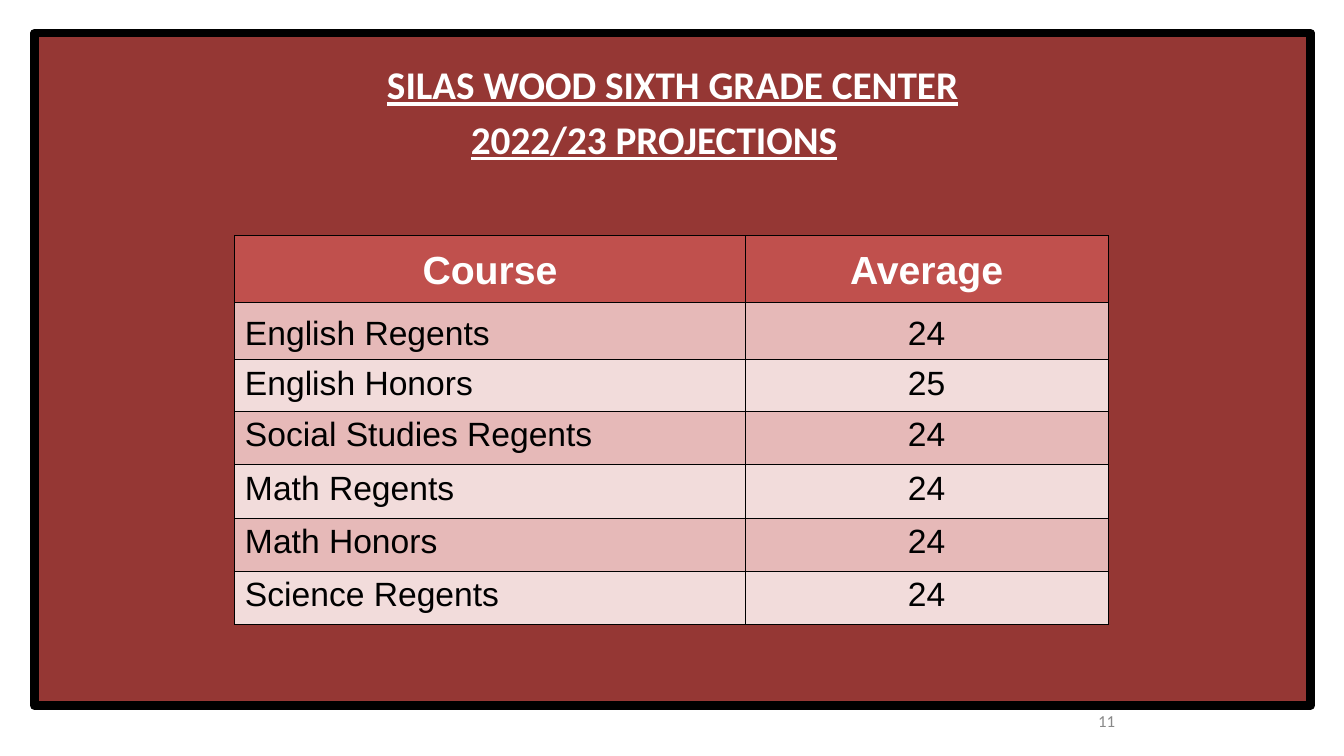
from lxml import etree
from pptx import Presentation
from pptx.dml.color import RGBColor
from pptx.enum.text import MSO_ANCHOR, MSO_AUTO_SIZE, PP_ALIGN
from pptx.oxml.ns import qn
from pptx.util import Inches, Pt

LEFT, MID, RIGHT = PP_ALIGN.LEFT, PP_ALIGN.CENTER, PP_ALIGN.RIGHT
TOP, CENTER = MSO_ANCHOR.TOP, MSO_ANCHOR.MIDDLE
FIXED = MSO_AUTO_SIZE.NONE

WIDE, HIGH = 13.33, 7.5
HUES = {
    "panel": "953734", "head": "C0504D", "odd": "E6B9B8", "even": "F2DCDB",
    "white": "FFFFFF", "black": "000000", "gray": "888888",
}
COLS = [5.06, 3.6]
ROWS = [0.66, 0.56, 0.51, 0.53, 0.53, 0.53, 0.53]
DATA = [
    ("Course", "Average"),
    ("English Regents", "24"),
    ("English Honors", "25"),
    ("Social Studies Regents", "24"),
    ("Math Regents", "24"),
    ("Math Honors", "24"),
    ("Science Regents", "24"),
]


def tint(name):
    return RGBColor.from_string(HUES[name])


def paint(fill, name):
    fill.solid()
    fill.fore_color.rgb = tint(name)


def place(shape, left, top, width, height):
    shape.left, shape.top = Inches(left), Inches(top)
    shape.width, shape.height = Inches(width), Inches(height)


def write(para, text, size=24, font="Arial", hue="black", bold=False,
          line=False, align=LEFT, gap=0):
    para.alignment = align
    para.space_before = Pt(gap)
    run = para.add_run()
    run.text = text
    run.font.size, run.font.name = Pt(size), font
    run.font.bold, run.font.underline = bold, line
    run.font.color.rgb = tint(hue)


def add_title(slide):
    panel = slide.shapes.title
    place(panel, 0.34, 0.33, 12.66, 6.67)
    paint(panel.fill, "panel")
    panel.line.color.rgb = tint("black")
    panel.line.width = Pt(6)
    frame = panel.text_frame
    frame.word_wrap, frame.auto_size = True, FIXED
    frame.vertical_anchor = TOP
    frame.margin_top = Inches(0.27)
    look = dict(font="Calibri", hue="white", bold=True, align=MID)
    write(frame.paragraphs[0], "SILAS WOOD SIXTH GRADE CENTER",
          size=28, line=True, **look)
    last = frame.add_paragraph()
    write(last, "2022/23 PROJECTIONS", size=28, line=True, gap=5.6, **look)
    write(last, "\t", size=20, gap=5.6, **look)


def edge(cell):
    props = cell._tc.get_or_add_tcPr()
    for spot, side in enumerate(("a:lnL", "a:lnR", "a:lnT", "a:lnB")):
        line = etree.Element(qn(side), w=str(Pt(0.75)))
        fill = etree.SubElement(line, qn("a:solidFill"))
        etree.SubElement(fill, qn("a:srgbClr"), val=HUES["black"])
        props.insert(spot, line)


def add_grid(slide):
    frame = slide.shapes.add_table(
        len(ROWS), len(COLS), Inches(2.33), Inches(2.34),
        Inches(sum(COLS)), Inches(sum(ROWS)))
    table = frame.table
    for col, width in zip(table.columns, COLS):
        col.width = Inches(width)
    for row, height in zip(table.rows, ROWS):
        row.height = Inches(height)
    for r, words in enumerate(DATA):
        head = r == 0
        look = dict(size=28, hue="white", bold=True) if head else {}
        for c, text in enumerate(words):
            cell = table.cell(r, c)
            paint(cell.fill, "head" if head else "odd" if r % 2 else "even")
            edge(cell)
            cell.margin_top = Inches(0.13 if r < 2 else 0.05)
            cell.margin_bottom = Inches(0.04)
            write(cell.text_frame.paragraphs[0], text,
                  align=MID if head or c else LEFT, **look)


def add_page(slide):
    box = slide.shapes.add_textbox(0, 0, 0, 0)
    place(box, 8.83, 6.95, 2.33, 0.4)
    box.text_frame.word_wrap = True
    box.text_frame.vertical_anchor = CENTER
    write(box.text_frame.paragraphs[0], "11", size=12, font="Calibri",
          hue="gray", align=RIGHT)


def main():
    deck = Presentation()
    deck.slide_width, deck.slide_height = Inches(WIDE), Inches(HIGH)
    slide = deck.slides.add_slide(deck.slide_layouts[5])
    add_title(slide)
    add_page(slide)
    add_grid(slide)
    deck.save("out.pptx")


if __name__ == "__main__":
    main()
